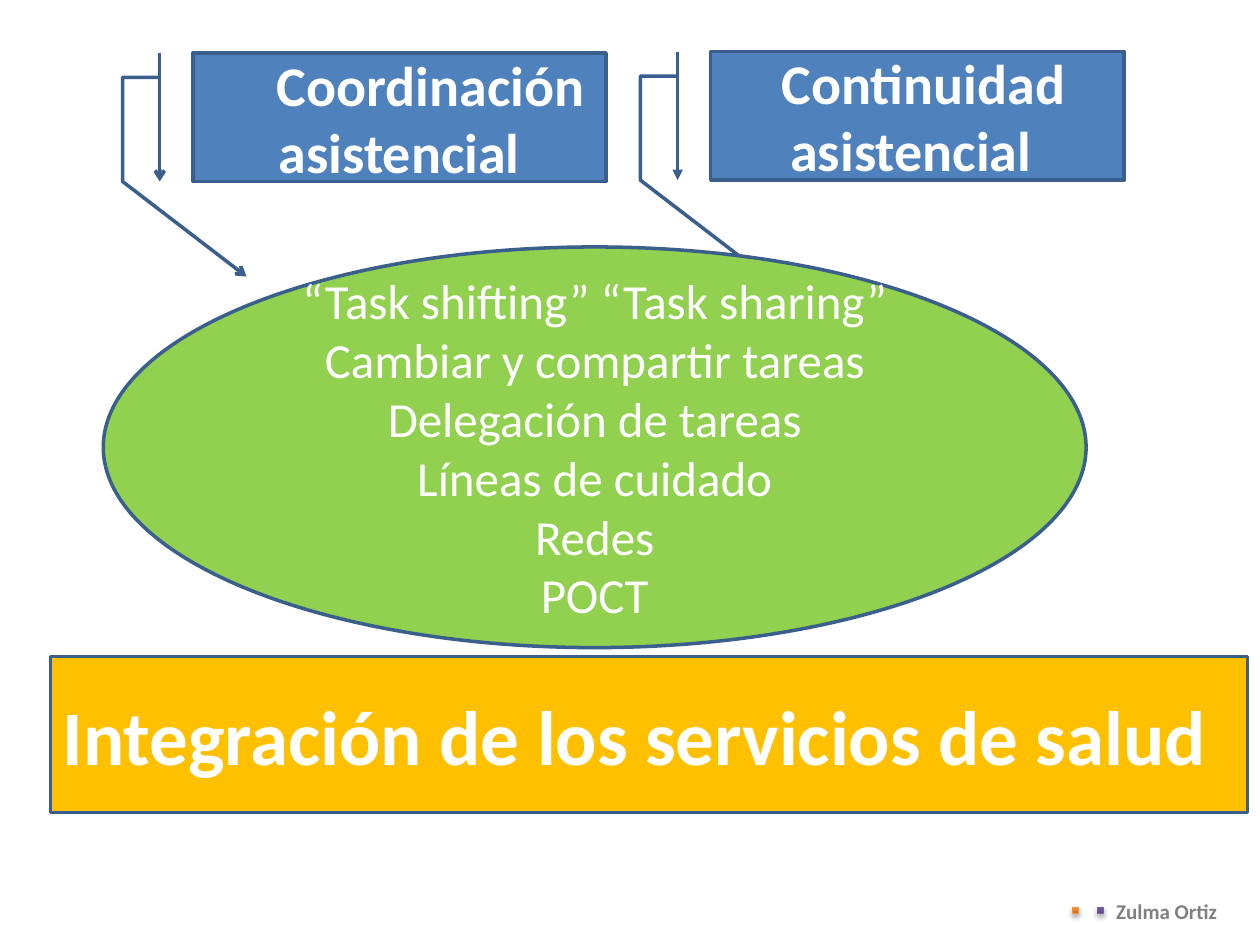
"""Builds a slide on integration of health services."""
from lxml import etree
from pptx import Presentation
from pptx.dml.color import RGBColor
from pptx.enum import shapes, text
from pptx.oxml import parse_xml
from pptx.oxml.ns import nsdecls, qn
from pptx.util import Inches, Pt

MSO, ALIGN = shapes.MSO_SHAPE, text.PP_ALIGN
OUTLINE, WHITE = "3A5F8C", "FFFFFF"
CALLOUTS = [
    ("\tCoordinación asistencial", 1.53, 0.42, "arrow"),
    (" Continuidad asistencial ", 5.64, 0.41, "triangle"),
]
LEADER = [0.19, -0.08, 0.19, -0.17, 1, -0.17, 1.74, 0.13]
STRATEGIES = [
    "“Task shifting” “Task sharing”",
    "Cambiar y compartir tareas",
    "Delegación de tareas",
    "Líneas de cuidado",
    "Redes",
    "POCT",
]
GOAL = "Integración de los servicios de salud"
AUTHOR = "Zulma Ortiz"
MARKERS = [(8.51, "CC6E20", "FF9136", "F69240"), (8.71, "5F4480", "7C57A8", "7D60A0")]


def rgb(value):
    return RGBColor.from_string(value)


def write(s, lines, size, color=WHITE, bold=False, align=ALIGN.CENTER):
    tf = s.text_frame
    for i, line in enumerate(lines):
        p = tf.add_paragraph() if i else tf.paragraphs[0]
        p.text, p.alignment = line, align
        p.font.name, p.font.size, p.font.bold = "Calibri", Pt(size), bold
        p.font.color.rgb = rgb(color)


def add_shape(slide, kind, box, fill=None, line=OUTLINE, width=2):
    s = slide.shapes.add_shape(kind, *map(Inches, box))
    s.shadow.inherit = False
    if fill:
        s.fill.solid()
        s.fill.fore_color.rgb = rgb(fill)
    s.line.color.rgb, s.line.width = rgb(line), Pt(width)
    s.text_frame.word_wrap = True
    s.text_frame.vertical_anchor = text.MSO_ANCHOR.MIDDLE
    return s


def add_marker(slide, left, dark, light, line):
    s = add_shape(slide, MSO.RECTANGLE, (left, 7.2, 0.05, 0.05), line=line, width=0.75)
    s.fill.gradient()
    s.fill.gradient_angle = 90
    for stop, color in zip(s.fill.gradient_stops, (dark, light)):
        stop.color.rgb = rgb(color)
    s._element.spPr.find(qn("a:effectLst")).append(parse_xml(
        f'<a:outerShdw {nsdecls("a")} blurRad="{Pt(3.1)}" dist="{Pt(1.8)}" dir="5400000">'
        '<a:srgbClr val="000000"><a:alpha val="35000"/></a:srgbClr></a:outerShdw>'))


def main():
    prs = Presentation()
    prs.slide_width, prs.slide_height = Inches(10), Inches(7.5)
    slide = prs.slides.add_slide(prs.slide_layouts[6])

    author = slide.shapes.add_textbox(*map(Inches, (8.76, 7.08, 1.01, 0.3)))
    author.text_frame.word_wrap = False
    write(author, [AUTHOR], 12, "808080", True, ALIGN.LEFT)
    for marker in MARKERS:
        add_marker(slide, *marker)

    for label, left, top, arrow in CALLOUTS:
        s = add_shape(slide, MSO.LINE_CALLOUT_3_BORDER_AND_ACCENT_BAR,
                      (left, top, 3.28, 1.02), "4F81BD")
        for i, value in enumerate(LEADER):
            s.adjustments[i] = value
        etree.SubElement(s.line._get_or_add_ln(), qn("a:tailEnd"), type=arrow)
        write(s, [label], 32, bold=True)

    write(add_shape(slide, MSO.OVAL, (0.82, 1.96, 7.8, 3.18), "92D050"), STRATEGIES, 28)
    goal = add_shape(slide, MSO.RECTANGLE, (0.4, 5.21, 9.5, 1.24), "FFC000")
    write(goal, [GOAL], 44, bold=True, align=ALIGN.LEFT)
    prs.save("out.pptx")


if __name__ == "__main__":
    main()
